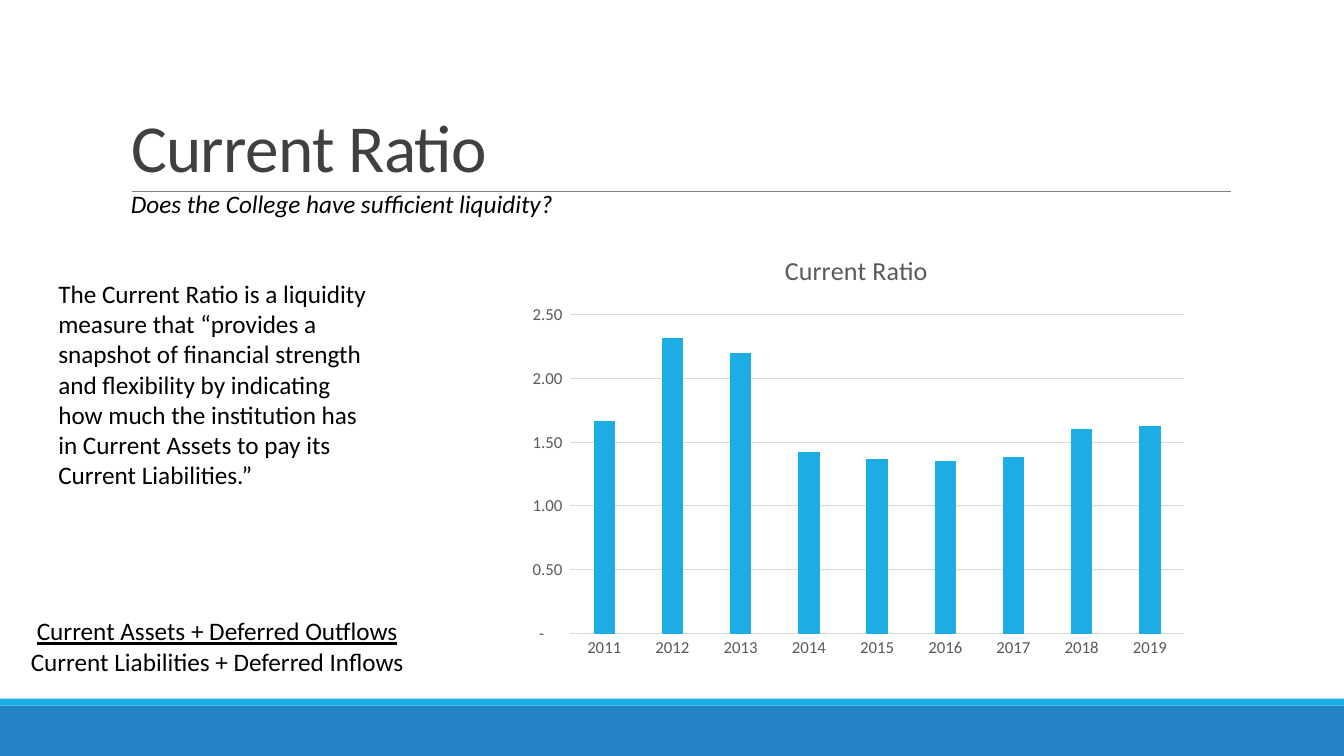
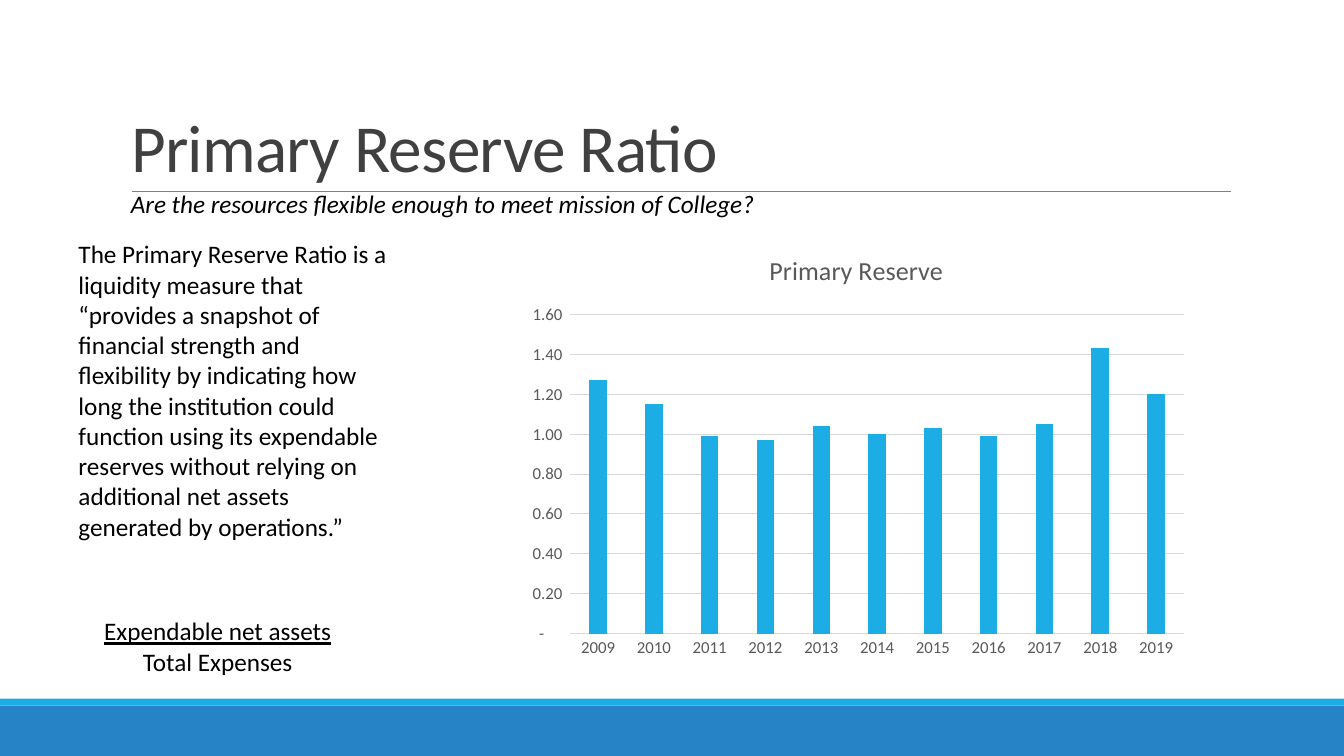
import pptx
import pptx.chart.data
import pptx.dml.color
import pptx.enum.chart
import pptx.enum.shapes
import pptx.enum.text
import pptx.oxml
import pptx.util
from dataclasses import dataclass

FONT = "Calibri"
BLACK, TITLE_GRAY, CHART_GRAY = "000000", "404040", "595959"
GRID_GRAY, RULE_GRAY = "D9D9D9", "808080"
SKY, BLUE = "1CADE4", "2683C6"
WIDTH, HEIGHT = pptx.util.Inches(13.33), pptx.util.Inches(7.5)
COLUMN, ROW = WIDTH / 100, HEIGHT / 100
MARGIN, BODY_SIZE = 9, 18
NUMBER_FORMAT = '_(* #,##0.00_);_(* \\(#,##0.00\\);_(* "-"??_);_(@_)'


@dataclass
class Ratio:
    title: str
    question: str
    question_columns: float
    explanation: str
    explanation_box: tuple
    numerator: str
    denominator: str
    formula_left: float
    formula_columns: float
    series: str
    first_year: int
    values: tuple
    axis_max: float
    axis_step: float


RATIOS = [
    Ratio(
        title="Current Ratio",
        question="Does the College have sufficient liquidity?",
        question_columns=33.3,
        explanation="The Current Ratio is a liquidity measure that “provides a snapshot of "
                    "financial strength and flexibility by indicating how much the institution "
                    "has in Current Assets to pay its Current Liabilities.”",
        explanation_box=(3.6, 36.13, 25.13, 29.6),
        numerator="Current Assets + Deferred Outflows",
        denominator="Current Liabilities + Deferred Inflows",
        formula_left=1.35,
        formula_columns=29.63,
        series="Current Ratio",
        first_year=2011,
        values=(1.67, 2.32, 2.2, 1.42, 1.37, 1.35, 1.38, 1.6, 1.63),
        axis_max=2.5,
        axis_step=0.5,
    ),
    Ratio(
        title="Primary Reserve Ratio",
        question="Are the resources flexible enough to meet mission of College?",
        question_columns=49.5,
        explanation="The Primary Reserve Ratio is a liquidity measure that “provides a snapshot "
                    "of financial strength and flexibility by indicating how long the institution "
                    "could function using its expendable reserves without relying on additional "
                    "net assets generated by operations.”",
        explanation_box=(5.1, 30.93, 25.13, 41.73),
        numerator="Expendable net assets",
        denominator="Total Expenses",
        formula_left=6.9,
        formula_columns=18.6,
        series="Primary Reserve",
        first_year=2009,
        values=(1.27, 1.15, 0.99, 0.97, 1.04, 1, 1.03, 0.99, 1.05, 1.43, 1.2),
        axis_max=1.6,
        axis_step=0.2,
    ),
]


def rgb(color):
    return pptx.dml.color.RGBColor.from_string(color)


def grid(left, top, columns, rows):
    return (round(left * COLUMN), round(top * ROW),
            round(columns * COLUMN), round(rows * ROW))


def style(font, size, color, italic=False):
    font.name = FONT
    font.size = pptx.util.Pt(size)
    font.bold = False
    font.italic = italic
    font.color.rgb = rgb(color)


def add_band(slide, top, rows, color):
    band = slide.shapes.add_shape(pptx.enum.shapes.MSO_SHAPE.RECTANGLE,
                                  *grid(0, top, 100, rows))
    band.shadow.inherit = False
    band.fill.solid()
    band.fill.fore_color.rgb = rgb(color)
    band.line.fill.background()
    return band


def add_rule(slide, left, right, top):
    start_x, start_y, length, _ = grid(left, top, right - left, 0)
    rule = slide.shapes.add_connector(pptx.enum.shapes.MSO_CONNECTOR.STRAIGHT,
                                      start_x, start_y, start_x + length, start_y)
    rule.line.color.rgb = rgb(RULE_GRAY)
    rule.line.width = pptx.util.Pt(0.5)
    properties = rule.element.spPr
    properties.append(properties.makeelement(pptx.oxml.ns.qn("a:effectLst"), {}))
    return rule


def decorate_layout(layout, slide):
    for placeholder in list(layout.placeholders):
        if placeholder.placeholder_format.idx != 0:
            layout.shapes.element.remove(placeholder.element)
    decorations = [add_band(slide, 93.33, 6.67, BLUE),
                   add_band(slide, 92.4, 0.93, SKY),
                   add_rule(slide, 9.83, 91.58, 25.33)]
    for decoration in decorations:
        layout.shapes.element.append(decoration.element)


def set_title(slide, text):
    title = slide.shapes.title
    title.left, title.top, title.width, title.height = grid(MARGIN, 4.13, 82.5, 21.2)
    frame = title.text_frame
    frame.text = text
    frame.word_wrap = True
    frame.auto_size = pptx.enum.text.MSO_AUTO_SIZE.NONE
    frame.vertical_anchor = pptx.enum.text.MSO_ANCHOR.BOTTOM
    paragraph = frame.paragraphs[0]
    paragraph.alignment = pptx.enum.text.PP_ALIGN.LEFT
    paragraph.line_spacing = 0.85
    for run in paragraph.runs:
        style(run.font, 48, TITLE_GRAY)
        run.font.element.set("spc", "-50") if hasattr(run.font, "element") else \
            run._r.get_or_add_rPr().set("spc", "-50")


def add_text(slide, box, text, wrap=True, italic=False):
    frame = slide.shapes.add_textbox(*grid(*box)).text_frame
    frame.word_wrap = wrap
    frame.auto_size = pptx.enum.text.MSO_AUTO_SIZE.SHAPE_TO_FIT_TEXT
    paragraph = frame.paragraphs[0]
    paragraph.text = text
    for run in paragraph.runs:
        style(run.font, BODY_SIZE, BLACK, italic)
    return paragraph


def add_formula(slide, ratio):
    box = (ratio.formula_left, 80.8, ratio.formula_columns, 9.47)
    formula = add_text(slide, box, f"{ratio.numerator}\v{ratio.denominator}", wrap=False)
    formula.alignment = pptx.enum.text.PP_ALIGN.CENTER
    formula.runs[0].font.underline = True


def style_axis(axis):
    axis.major_tick_mark = axis.minor_tick_mark = pptx.enum.chart.XL_TICK_MARK.NONE
    style(axis.tick_labels.font, 12, CHART_GRAY)


def style_line(line):
    line.color.rgb = rgb(GRID_GRAY)
    line.width = pptx.util.Pt(0.75)


def add_ratio_chart(slide, ratio):
    data = pptx.chart.data.CategoryChartData(number_format=NUMBER_FORMAT)
    data.categories = [str(ratio.first_year + i) for i in range(len(ratio.values))]
    data.add_series(ratio.series, ratio.values)
    chart = slide.shapes.add_chart(pptx.enum.chart.XL_CHART_TYPE.COLUMN_CLUSTERED,
                                   *grid(38.33, 30.93, 50.78, 57.2), data).chart
    style(chart.font, 10, BLACK)
    chart.has_legend = False
    chart.has_title = True
    heading = chart.chart_title.text_frame
    heading.text = ratio.series
    style(heading.paragraphs[0].runs[0].font, 18.6, CHART_GRAY)
    chart.chart_title.include_in_layout = False

    plot = chart.plots[0]
    plot.vary_by_categories = False
    plot.gap_width, plot.overlap = 219, -27
    columns = plot.series[0].format.fill
    columns.solid()
    columns.fore_color.rgb = rgb(SKY)

    years, amounts = chart.category_axis, chart.value_axis
    style_axis(years)
    style_line(years.format.line)
    style_axis(amounts)
    amounts.format.line.fill.background()
    amounts.has_major_gridlines = True
    style_line(amounts.major_gridlines.format.line)
    amounts.minimum_scale, amounts.maximum_scale = 0, ratio.axis_max
    amounts.major_unit = ratio.axis_step
    amounts.tick_labels.number_format = NUMBER_FORMAT
    amounts.tick_labels.number_format_is_linked = False


def fill_slide(slide, ratio):
    set_title(slide, ratio.title)
    add_ratio_chart(slide, ratio)
    add_text(slide, (MARGIN, 24.27, ratio.question_columns, 5.33), ratio.question,
             wrap=False, italic=True)
    add_text(slide, ratio.explanation_box, ratio.explanation)
    add_formula(slide, ratio)


def main():
    deck = pptx.Presentation()
    deck.slide_width, deck.slide_height = WIDTH, HEIGHT
    layout = deck.slide_layouts.get_by_name("Title Only")
    slides = [deck.slides.add_slide(layout) for _ in RATIOS]
    decorate_layout(layout, slides[0])
    for slide, ratio in zip(slides, RATIOS):
        fill_slide(slide, ratio)
    deck.save("out.pptx")


if __name__ == "__main__":
    main()
